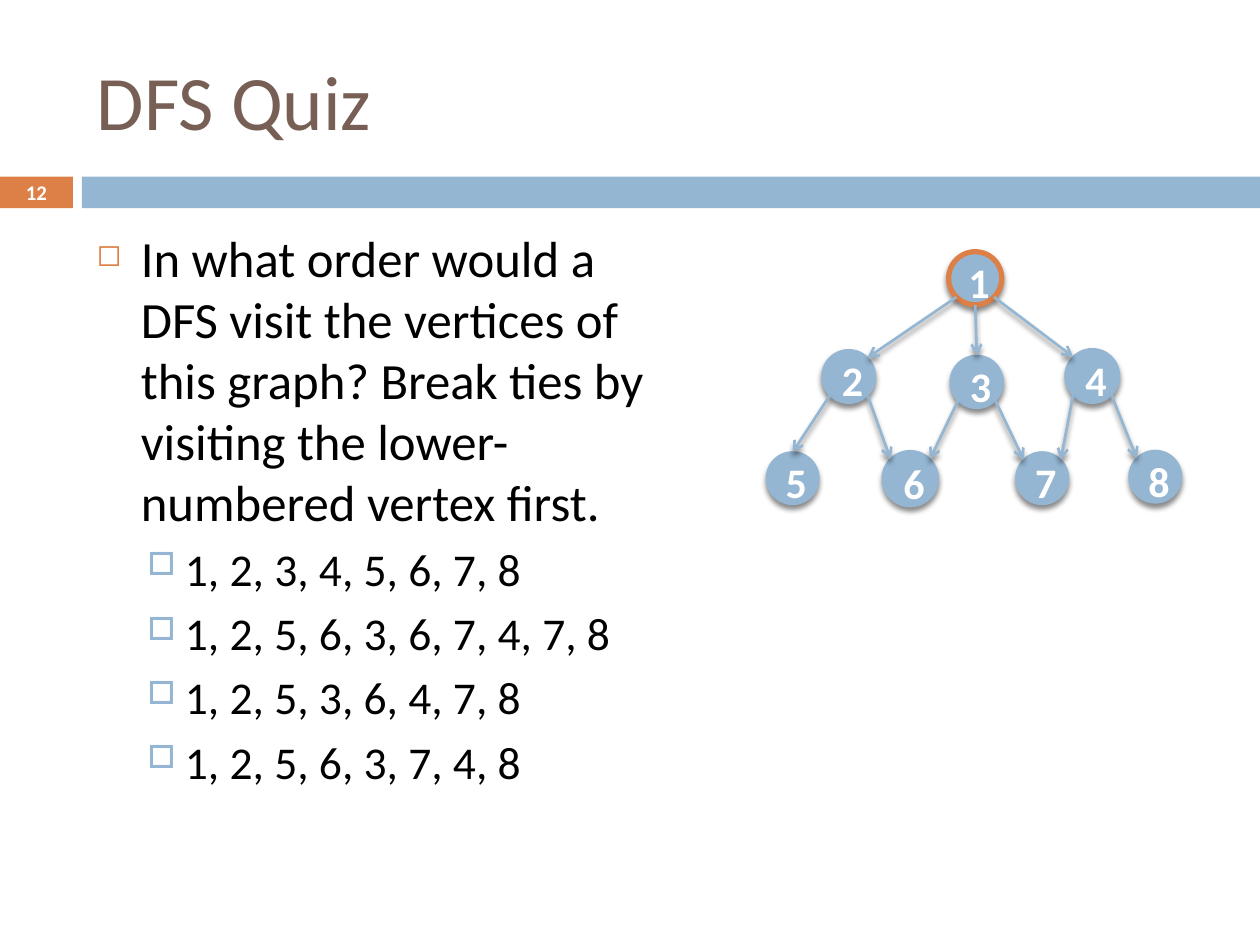
from math import sqrt

from lxml.etree import SubElement
from pptx import Presentation
from pptx.dml.color import RGBColor
from pptx.enum.shapes import MSO_CONNECTOR, MSO_SHAPE
from pptx.enum.text import MSO_ANCHOR, PP_ALIGN
from pptx.oxml.ns import qn
from pptx.util import Cm, Pt

BLUE, ORANGE, BROWN = "94B6D2", "DD8047", "775F55"
BLACK, WHITE = "000000", "FFFFFF"
FONT = "Calibri"

NODES = {
    "1": (19.66, 5.61, 1.07),
    "2": (17.11, 7.59, 1.08),
    "3": (19.69, 7.7, 1.07),
    "4": (22.02, 7.58, 1.1),
    "5": (15.98, 9.64, 1.06),
    "6": (18.35, 9.65, 1.13),
    "7": (21.01, 9.64, 1.06),
    "8": (23.29, 9.61, 1.06),
}
EDGES = [
    ("1", "SW", "2", "NE"), ("1", "S", "3", "N"), ("1", "SE", "4", "NW"),
    ("2", "SW", "5", "N"), ("2", "SE", "6", "NW"),
    ("3", "SW", "6", "NE"), ("3", "SE", "7", "NW"),
    ("4", "SW", "7", "NE"), ("4", "SE", "8", "NW"),
]
ORDERS = [
    "1, 2, 3, 4, 5, 6, 7, 8",
    "1, 2, 5, 6, 3, 6, 7, 4, 7, 8",
    "1, 2, 5, 3, 6, 4, 7, 8",
    "1, 2, 5, 6, 3, 7, 4, 8",
]


def tint(code):
    """Turn a hex string into a colour."""
    return RGBColor.from_string(code)


def style(para, size, color, bold=False):
    """Set the font of a paragraph."""
    font = para.font
    font.name, font.size, font.bold = FONT, Pt(size), bold
    font.color.rgb = tint(color)


def bar(slide, left, width):
    """Add one plain part of the band under the title."""
    shape = slide.shapes.add_shape(
        MSO_SHAPE.RECTANGLE, Cm(left), Cm(3.56), Cm(width), Cm(0.64))
    shape.shadow.inherit = False
    shape.fill.solid()
    shape.line.fill.background()
    return shape.fill.fore_color


def frame(slide, left, top, width, height, anchor):
    """Add a wrapping text box and return its text frame."""
    box = slide.shapes.add_textbox(Cm(left), Cm(top), Cm(width), Cm(height))
    text = box.text_frame
    text.word_wrap = True
    text.vertical_anchor = anchor
    return text


def bullet(para, mark, color, scale, left, hang):
    """Give a paragraph a hanging coloured bullet."""
    props = para._p.get_or_add_pPr()
    props.set("marL", str(Cm(left)))
    props.set("indent", str(-Cm(hang)))
    paint = SubElement(props, qn("a:buClr"))
    SubElement(paint, qn("a:srgbClr"), val=color)
    SubElement(props, qn("a:buSzPct"), val=str(scale * 1000))
    SubElement(props, qn("a:buChar"), char=mark)


def shade(effects):
    """Add a soft shadow that falls straight down."""
    drop = SubElement(effects, qn("a:outerShdw"), blurRad=str(Pt(3)),
                      dist=str(Pt(2.4)), dir="5400000", rotWithShape="0")
    color = SubElement(drop, qn("a:srgbClr"), val=BLACK)
    SubElement(color, qn("a:alpha"), val="45000")


def node(graph, label, edge, weight):
    """Add one numbered vertex."""
    x, y, size = NODES[label]
    shape = graph.shapes.add_shape(
        MSO_SHAPE.OVAL, Cm(x - size / 2), Cm(y - size / 2), Cm(size), Cm(size))
    shape.shadow.inherit = False
    shade(shape._element.spPr.find(qn("a:effectLst")))
    shape.fill.solid()
    shape.fill.fore_color.rgb = tint(BLUE)
    shape.line.color.rgb = tint(edge)
    shape.line.width = Pt(weight)
    text = shape.text_frame
    text.word_wrap = False
    text.vertical_anchor = MSO_ANCHOR.MIDDLE
    text.margin_left = text.margin_top = Cm(0.15)
    text.margin_right = text.margin_bottom = 0
    para = text.paragraphs[0]
    para.text = label
    para.alignment = PP_ALIGN.CENTER
    style(para, 24, WHITE, True)


def rim(label, side):
    """Return the point on a vertex's rim at a compass side."""
    x, y, size = NODES[label]
    reach = size / 2 / sqrt(len(side))
    across = ("E" in side) - ("W" in side)
    down = ("S" in side) - ("N" in side)
    return Cm(x + across * reach), Cm(y + down * reach)


def arrow(graph, start, exit, end, entry):
    """Add one directed edge between two vertices."""
    link = graph.shapes.add_connector(
        MSO_CONNECTOR.STRAIGHT, *rim(start, exit), *rim(end, entry))
    link.line.color.rgb = tint(BLUE)
    link.line.width = Pt(1.5)
    SubElement(link.line._get_or_add_ln(), qn("a:tailEnd"), type="arrow")
    shade(SubElement(link._element.spPr, qn("a:effectLst")))


def head(slide):
    """Add the title, the band and the slide number."""
    bar(slide, 0, 1.47).rgb = tint(ORANGE)
    bar(slide, 1.65, 23.75).rgb = tint(BLUE)
    title = frame(slide, 1.7, 0.64, 22.66, 2.74, MSO_ANCHOR.MIDDLE).paragraphs[0]
    title.text = "DFS Quiz"
    style(title, 44, BROWN)
    text = frame(slide, 0, 3.53, 1.47, 0.69, MSO_ANCHOR.MIDDLE)
    text.margin_left = text.margin_right = 0
    page = text.paragraphs[0]
    page.text = "12"
    page.alignment = PP_ALIGN.CENTER
    style(page, 11.9, WHITE, True)


def quiz(slide):
    """Add the question and its possible answers."""
    text = frame(slide, 1.7, 4.45, 11.84, 12.5, MSO_ANCHOR.TOP)
    ask = text.paragraphs[0]
    ask.text = ("In what order would a DFS visit the vertices of this graph? "
                "Break ties by visiting the lower-numbered vertex first.")
    ask.space_before = Pt(7)
    style(ask, 29, BLACK)
    bullet(ask, "◻", ORANGE, 60, 0.89, 0.89)
    for order in ORDERS:
        para = text.add_paragraph()
        para.text = order
        para.level = 1
        para.space_before = Pt(5.5)
        style(para, 26, BLACK)
        bullet(para, "□", BLUE, 70, 1.78, 0.76)


def draw(slide):
    """Add the graph with its start vertex outlined."""
    graph = slide.shapes.add_group_shape()
    for label in NODES:
        edge, weight = (ORANGE, 3) if label == "1" else (BLUE, 0.79)
        node(graph, label, edge, weight)
    for edge in EDGES:
        arrow(graph, *edge)


def main():
    """Build the slide and save it."""
    deck = Presentation()
    deck.slide_width, deck.slide_height = Cm(25.4), Cm(19.05)
    slide = deck.slides.add_slide(deck.slide_layouts[6])
    head(slide)
    quiz(slide)
    draw(slide)
    deck.save("out.pptx")


if __name__ == "__main__":
    main()
